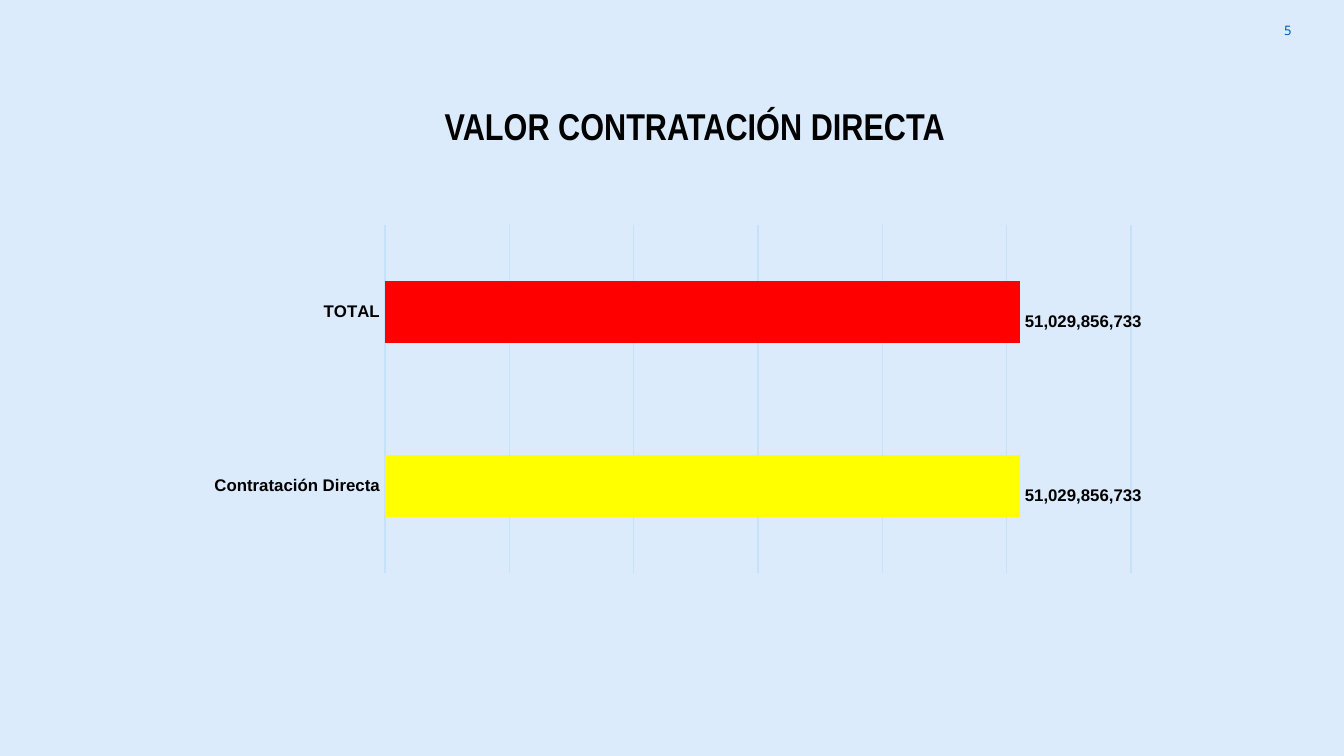
from lxml import etree
from pptx import Presentation
from pptx.chart.data import CategoryChartData
from pptx.dml.color import RGBColor
from pptx.enum.chart import XL_CHART_TYPE as ChartType, XL_LABEL_POSITION as LabelPos
from pptx.enum.chart import XL_TICK_LABEL_POSITION as TickPos, XL_TICK_MARK as TickMark
from pptx.enum.text import MSO_ANCHOR as Anchor, MSO_AUTO_SIZE as AutoSize, PP_ALIGN as Align
from pptx.oxml.ns import qn
from pptx.util import Cm, Pt

COLORS = {"bg": "DCEBFB", "text": "000000", "number": "0054BC", "chart": "073763",
          "grid": "C6E2FB", "series": "E4EDFE", "direct": "FFFF00", "total": "FF0000"}
NUM_FMT = '_-* #,##0_-;\\-* #,##0_-;_-* "-"??_-;_-@_'
BARS = [("Contratación Directa", 51029856733, "direct"), ("TOTAL", 51029856733, "total")]
PLOT = {"x": 0.2, "y": 0.02, "w": 0.78, "h": 0.96}


def rgb(name):
    return RGBColor.from_string(COLORS[name])


def set_attrs(obj, values):
    for name, value in values.items():
        setattr(obj, name, value)


def set_font(font, color, **values):
    font.color.rgb = rgb(color)
    set_attrs(font, values)


def paint(fill, color):
    fill.solid()
    fill.fore_color.rgb = rgb(color)


def set_line(line, color):
    line.color.rgb = rgb(color)
    line.width = Pt(0.75)


def fix_plot_area(chart):
    """Pin the inner plot area to fractions of the chart box."""
    plot_area = chart._chartSpace.chart.plotArea
    for old in plot_area.findall(qn("c:layout")):
        plot_area.remove(old)
    layout = etree.Element(qn("c:layout"))
    manual = etree.SubElement(layout, qn("c:manualLayout"))
    settings = {"layoutTarget": "inner", "xMode": "edge", "yMode": "edge", **PLOT}
    for tag, value in settings.items():
        etree.SubElement(manual, qn(f"c:{tag}")).set("val", str(value))
    plot_area.insert(0, layout)


def add_page_number(s, box, number):
    tf = s.shapes.add_textbox(*box).text_frame
    set_attrs(tf, {"word_wrap": True, "vertical_anchor": Anchor.MIDDLE,
                   "margin_top": Cm(0.25), "margin_bottom": Cm(0.25)})
    p = tf.paragraphs[0]
    p.alignment = Align.RIGHT
    r = p.add_run()
    r.text = number
    set_font(r.font, "number", name="Noto Sans", size=Pt(7))


def format_title(s, box, text):
    title = s.shapes.title
    set_attrs(title, dict(zip(("left", "top", "width", "height"), box)))
    tf = title.text_frame
    set_attrs(tf, {"word_wrap": False, "auto_size": AutoSize.SHAPE_TO_FIT_TEXT,
                   "vertical_anchor": Anchor.TOP})
    p = tf.paragraphs[0]
    p.alignment = Align.LEFT
    r = p.add_run()
    r.text = text
    set_font(r.font, "text", name="Arial Narrow", size=Pt(20), bold=True)


def add_bar_chart(s, box):
    data = CategoryChartData(number_format=NUM_FMT)
    data.categories = [name for name, _, _ in BARS]
    data.add_series("Series 1", [value for _, value, _ in BARS])
    chart = s.shapes.add_chart(ChartType.BAR_CLUSTERED, *box, data).chart
    set_attrs(chart, {"has_legend": False, "has_title": False})
    set_font(chart.font, "chart", name="Arial", size=Pt(10), bold=True)
    fix_plot_area(chart)

    cat = chart.category_axis
    set_attrs(cat, {"major_tick_mark": TickMark.NONE, "minor_tick_mark": TickMark.NONE})
    set_line(cat.format.line, "grid")
    val = chart.value_axis
    set_attrs(val, {"minimum_scale": 0, "maximum_scale": 60e9, "major_unit": 10e9,
                    "has_major_gridlines": True, "tick_label_position": TickPos.NONE,
                    "visible": False})
    set_line(val.major_gridlines.format.line, "grid")

    plot = chart.plots[0]
    set_attrs(plot, {"gap_width": 182, "vary_by_categories": False})
    series = plot.series[0]
    paint(series.format.fill, "series")
    for i, (_, _, color) in enumerate(BARS):
        paint(series.points[i].format.fill, color)
    labels = series.data_labels
    set_attrs(labels, {"show_value": True, "position": LabelPos.OUTSIDE_END,
                       "number_format": NUM_FMT, "number_format_is_linked": False})
    for font in (cat.tick_labels.font, labels.font):
        set_font(font, "text", name="Arial", size=Pt(9), bold=True)


def main():
    prs = Presentation()
    set_attrs(prs, {"slide_width": Cm(25.4), "slide_height": Cm(14.29)})
    s = prs.slides.add_slide(prs.slide_layouts[5])
    paint(s.background.fill, "bg")
    add_page_number(s, (Cm(23.14), Cm(0.03), Cm(1.52), Cm(1.09)), "5")
    format_title(s, (Cm(8.15), Cm(1.83), Cm(10.24), Cm(1.12)), "VALOR CONTRATACIÓN DIRECTA")
    add_bar_chart(s, (Cm(3.66), Cm(4.11), Cm(18.08), Cm(6.86)))
    prs.save("out.pptx")


if __name__ == "__main__":
    main()
